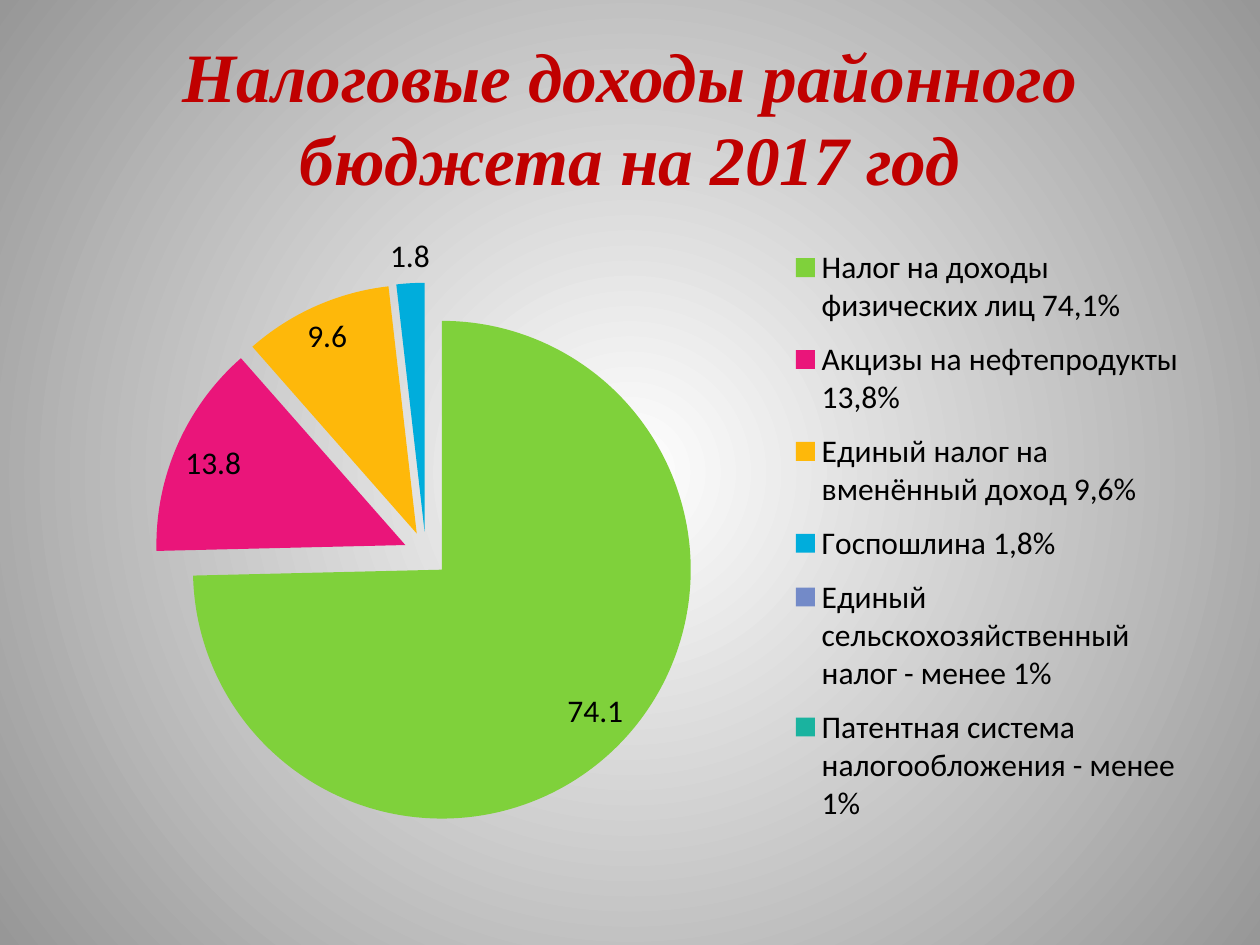
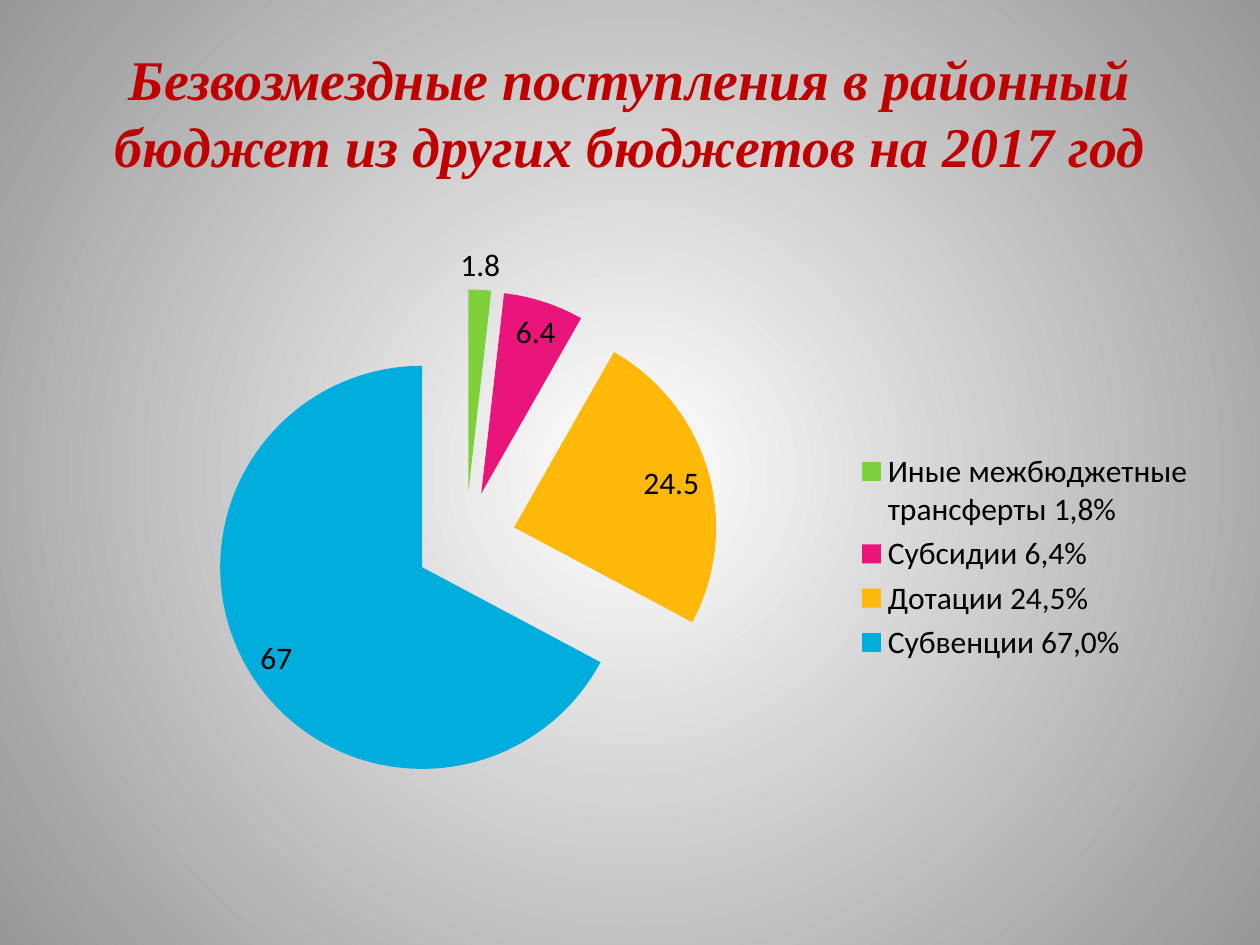
from dataclasses import dataclass

from lxml import etree
from pptx import Presentation
from pptx.chart.data import CategoryChartData
from pptx.dml.color import RGBColor
from pptx.enum.chart import XL_CHART_TYPE, XL_LABEL_POSITION, XL_LEGEND_POSITION
from pptx.enum.text import MSO_ANCHOR, PP_ALIGN
from pptx.oxml import parse_xml
from pptx.oxml.ns import qn
from pptx.util import Inches, Pt

PIE = XL_CHART_TYPE.PIE
BEST_FIT = XL_LABEL_POSITION.BEST_FIT
LEGEND_RIGHT = XL_LEGEND_POSITION.RIGHT
MIDDLE = MSO_ANCHOR.MIDDLE
CENTER = PP_ALIGN.CENTER
DRAWING_NAMESPACE = "http://schemas.openxmlformats.org/drawingml/2006/main"
BLANK_LAYOUT = 6


@dataclass(frozen=True)
class Theme:
    title_font: str = "Times New Roman"
    title_color: str = "C00000"
    tax_title_size: float = 39.6
    transfers_title_size: float = 32
    chart_font: str = "Calibri"
    chart_color: str = "000000"
    chart_size: float = 18
    glow_center: str = "FFFFFF"
    glow_edge: str = "979797"
    slices: tuple = ("7FD13B", "EA157A", "FEB80A", "00ADDC", "738AC8", "1AB39F")


THEME = Theme()

TAX_INCOME = [
    ("Налог на доходы физических лиц 74,1%", 74.1),
    ("Акцизы на нефтепродукты 13,8%", 13.8),
    ("Единый налог на вменённый доход 9,6%", 9.6),
    ("Госпошлина 1,8%", 1.8),
    ("Единый сельскохозяйственный налог - менее 1%", 0),
    ("Патентная система налогообложения - менее 1%", 0),
]
TRANSFERS = [
    ("Иные межбюджетные трансферты 1,8%", 1.8),
    ("Субсидии 6,4%", 6.4),
    ("Дотации 24,5%", 24.5),
    ("Субвенции 67,0%", 67),
]


def set_background(master):
    """Give every slide a radial glow from the centre."""
    fill = master.background.fill
    fill.solid()
    solid = master.element.find(".//" + qn("p:bgPr")).find(qn("a:solidFill"))
    gradient = parse_xml(
        f'<a:gradFill xmlns:a="{DRAWING_NAMESPACE}" rotWithShape="1"><a:gsLst>'
        f'<a:gs pos="0"><a:srgbClr val="{THEME.glow_center}"/></a:gs>'
        f'<a:gs pos="100000"><a:srgbClr val="{THEME.glow_edge}"/></a:gs></a:gsLst>'
        '<a:path path="circle">'
        '<a:fillToRect l="50000" t="50000" r="50000" b="50000"/></a:path></a:gradFill>'
    )
    solid.getparent().replace(solid, gradient)


def add_title(slide, text, size, height):
    box = slide.shapes.add_textbox(Inches(0.5), Inches(0.3), Inches(9), Inches(height))
    frame = box.text_frame
    frame.word_wrap = True
    frame.vertical_anchor = MIDDLE
    paragraph = frame.paragraphs[0]
    paragraph.text = text
    paragraph.alignment = CENTER
    font = paragraph.font
    font.name, font.size = THEME.title_font, Pt(size)
    font.bold = font.italic = True
    font.color.rgb = RGBColor.from_string(THEME.title_color)


def explode(series, percent):
    explosion = etree.Element(qn("c:explosion"), val=str(percent))
    series._element.find(qn("c:dPt")).addprevious(explosion)


def hide_zero_labels(series):
    labels = series._element.find(qn("c:dLbls"))
    zeros = [index for index, value in enumerate(series.values) if value == 0]
    for position, index in enumerate(zeros):
        label = etree.Element(qn("c:dLbl"))
        etree.SubElement(label, qn("c:idx"), val=str(index))
        etree.SubElement(label, qn("c:delete"), val="1")
        labels.insert(position, label)


def build_layout(left, top, width, height, target=()):
    """Describe a fixed area, in fractions of the chart."""
    layout = etree.Element(qn("c:layout"))
    manual = etree.SubElement(layout, qn("c:manualLayout"))
    settings = [*target, ("xMode", "edge"), ("yMode", "edge"),
                ("x", left), ("y", top), ("w", width), ("h", height)]
    for name, value in settings:
        etree.SubElement(manual, qn(f"c:{name}"), val=str(value))
    return layout


def remove_layout(element):
    for old_layout in element.findall(qn("c:layout")):
        element.remove(old_layout)


def place_plot(chart, *area):
    plot_area = chart._chartSpace.find(".//" + qn("c:plotArea"))
    remove_layout(plot_area)
    plot_area.insert(0, build_layout(*area, target=[("layoutTarget", "inner")]))


def place_legend(chart, *area):
    legend = chart._chartSpace.find(".//" + qn("c:legend"))
    remove_layout(legend)
    legend.find(qn("c:legendPos")).addnext(build_layout(*area))


def add_pie(slide, shares, left, top, explosion):
    data = CategoryChartData()
    data.categories = [name for name, _ in shares]
    data.add_series("Series 1", [value for _, value in shares])
    chart = slide.shapes.add_chart(
        PIE, Inches(left), Inches(top), Inches(9), Inches(4.95), data).chart
    chart.has_title = False
    chart.font.name, chart.font.size = THEME.chart_font, Pt(THEME.chart_size)
    chart.font.color.rgb = RGBColor.from_string(THEME.chart_color)
    chart.has_legend = True
    chart.legend.position = LEGEND_RIGHT
    chart.legend.include_in_layout = False

    # Slices and their values
    plot = chart.plots[0]
    plot.vary_by_categories = True
    series = plot.series[0]
    for index, color in enumerate(THEME.slices[:len(shares)]):
        fill = series.points[index].format.fill
        fill.solid()
        fill.fore_color.rgb = RGBColor.from_string(color)
    explode(series, explosion)
    series.data_labels.show_value = True
    series.data_labels.position = BEST_FIT
    hide_zero_labels(series)
    return chart


def main():
    presentation = Presentation()
    presentation.slide_width, presentation.slide_height = Inches(10), Inches(7.5)
    set_background(presentation.slide_master)
    blank = presentation.slide_layouts[BLANK_LAYOUT]

    # Tax income
    slide = presentation.slides.add_slide(blank)
    add_title(slide, "Налоговые доходы районного бюджета на 2017 год",
              THEME.tax_title_size, 1.25)
    chart = add_pie(slide, TAX_INCOME, 0.5, 1.75, explosion=9)
    place_plot(chart, 0.08, 0.1, 0.48, 0.87)
    place_legend(chart, 0.64, 0.02, 0.35, 0.97)

    # Transfers from other budgets
    slide = presentation.slides.add_slide(blank)
    add_title(slide, "Безвозмездные поступления в районный бюджет "
                     "из других бюджетов на 2017 год",
              THEME.transfers_title_size, 1.17)
    chart = add_pie(slide, TRANSFERS, 0.59, 1.94, explosion=25)
    place_plot(chart, 0.06, 0.07, 0.57, 0.81)

    presentation.save("out.pptx")


if __name__ == "__main__":
    main()
